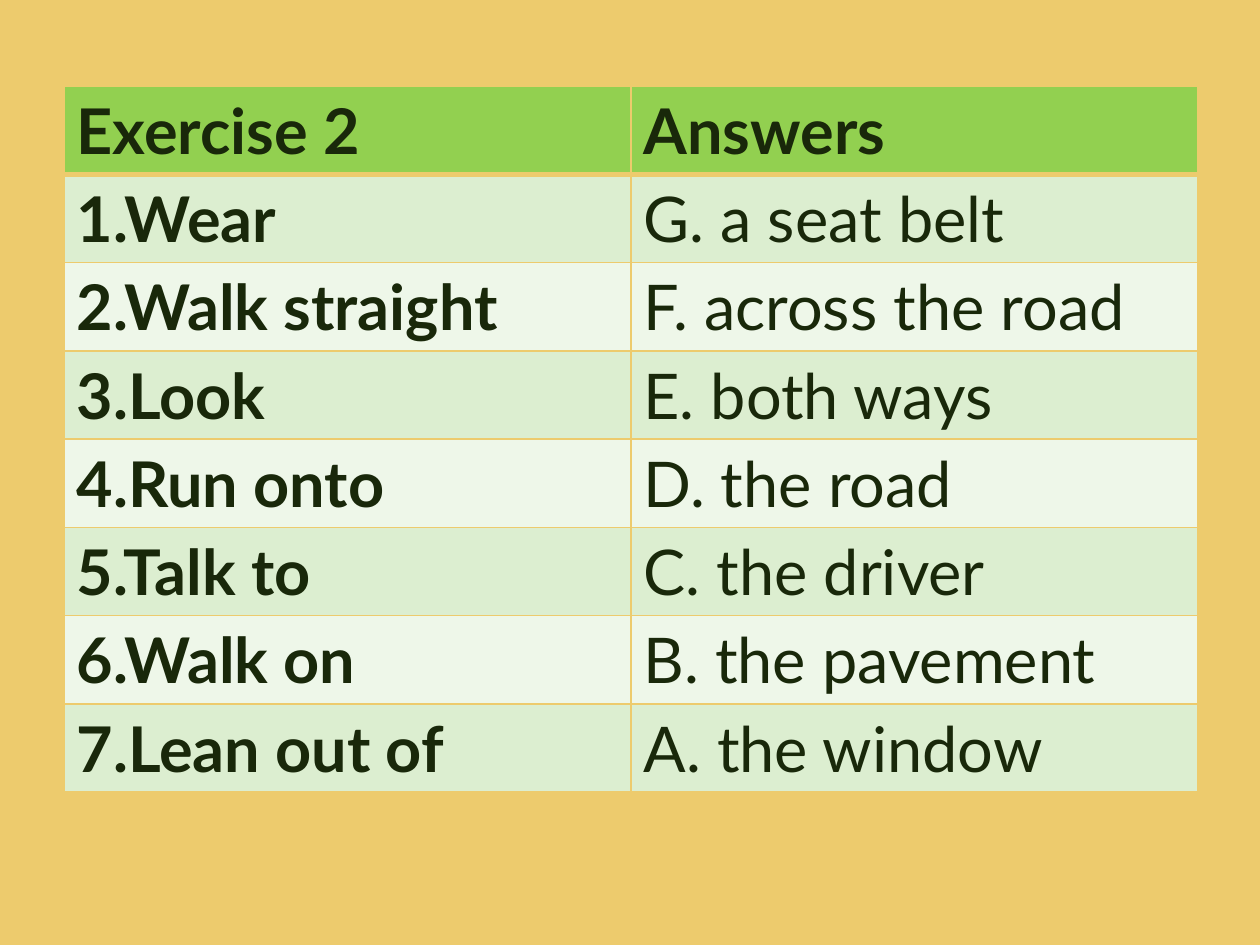
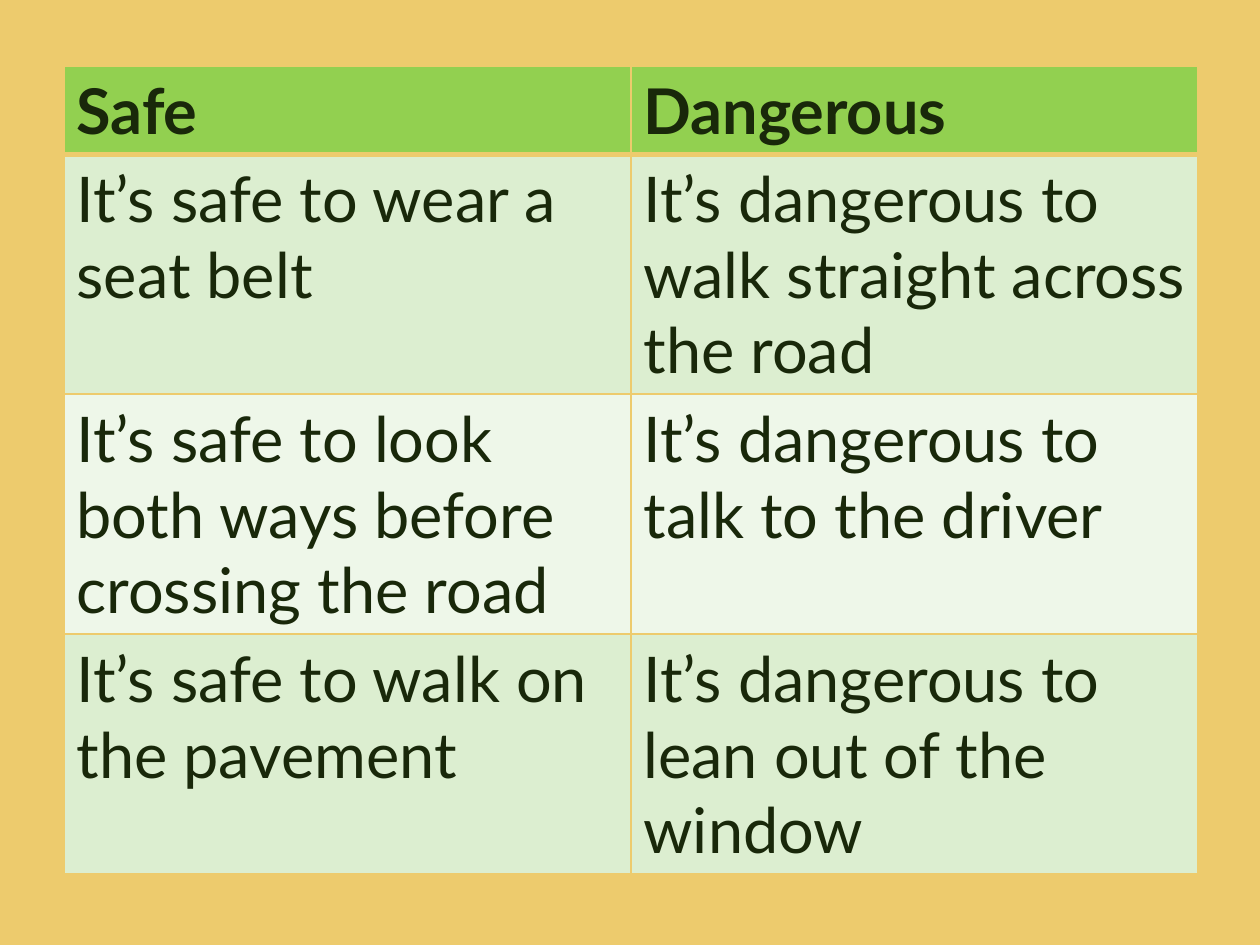
from lxml.etree import SubElement
from pptx import Presentation
from pptx.dml.color import RGBColor
from pptx.oxml.ns import qn
from pptx.util import Pt

# Content: one table per slide
TABLES = [
    {
        "top": 86, "lines": 1, "bold_first_column": True,
        "rows": [
            ("Exercise 2", "Answers"),
            ("1.Wear", "G. a seat belt"),
            ("2.Walk straight", "F. across the road"),
            ("3.Look", "E. both ways"),
            ("4.Run onto", "D. the road"),
            ("5.Talk to", "C. the driver"),
            ("6.Walk on", "B. the pavement"),
            ("7.Lean out of", "A. the window"),
        ],
    },
    {
        "top": 66, "lines": 3, "bold_first_column": False,
        "rows": [
            ("Safe", "Dangerous"),
            ("It’s safe to wear a seat belt",
             "It’s dangerous to walk straight across the road"),
            ("It’s safe to look both ways before crossing the road",
             "It’s dangerous to talk to the driver"),
            ("It’s safe to walk on the pavement",
             "It’s dangerous to lean out of the window"),
        ],
    },
]

# Shared look
COLORS = {"sand": "EDCB6D", "header": "92D050", "odd": "DCEED0",
          "even": "EEF7E9", "text": "19280A"}
FONT = {"name": "Lato", "size": Pt(36)}
PX = 914400 // 126
SLIDE_W, SLIDE_H = 1260, 945
LEFT, COL_W = 64, 567
LINE_H, ROW_PAD = 76, 12


def px(n):
    return n * PX


def rgb(name):
    return RGBColor.from_string(COLORS[name])


def set_borders(cell, widths):
    tcPr = cell._tc.get_or_add_tcPr()
    for i, (side, width) in enumerate(widths.items()):
        ln = SubElement(tcPr, qn("a:ln" + side), w=str(Pt(width)))
        fill = SubElement(ln, qn("a:solidFill"))
        SubElement(fill, qn("a:srgbClr"), val=COLORS["sand"])
        tcPr.insert(i, ln)  # borders come before the cell fill


def fill_cell(cell, text, fill, bold, top, bottom):
    cell.fill.solid()
    cell.fill.fore_color.rgb = rgb(fill)
    set_borders(cell, {"L": 1, "R": 1, "T": top, "B": bottom})
    r = cell.text_frame.paragraphs[0].add_run()
    r.text = text
    for key, value in {**FONT, "bold": bold}.items():
        setattr(r.font, key, value)
    r.font.color.rgb = rgb("text")


def add_table_slide(prs, spec):
    s = prs.slides.add_slide(prs.slide_layouts[6])
    s.background.fill.solid()
    s.background.fill.fore_color.rgb = rgb("sand")

    # Row heights follow from the number of text lines
    rows = spec["rows"]
    heights = [LINE_H + ROW_PAD]
    heights += [spec["lines"] * LINE_H + ROW_PAD] * (len(rows) - 1)
    table = s.shapes.add_table(len(rows), 2, px(LEFT), px(spec["top"]),
                               px(2 * COL_W), px(sum(heights))).table
    table.horz_banding = False
    for col in table.columns:
        col.width = px(COL_W)

    # Header, then alternating bands
    for i, (row, height) in enumerate(zip(rows, heights)):
        table.rows[i].height = px(height)
        fill = "header" if i == 0 else ("even", "odd")[i % 2]
        for j, text in enumerate(row):
            bold = i == 0 or (j == 0 and spec["bold_first_column"])
            fill_cell(table.cell(i, j), text, fill, bold,
                      top=3 if i == 1 else 1, bottom=3 if i == 0 else 1)


def main():
    prs = Presentation()
    prs.slide_width, prs.slide_height = px(SLIDE_W), px(SLIDE_H)
    for spec in TABLES:
        add_table_slide(prs, spec)
    prs.save("out.pptx")


if __name__ == "__main__":
    main()
